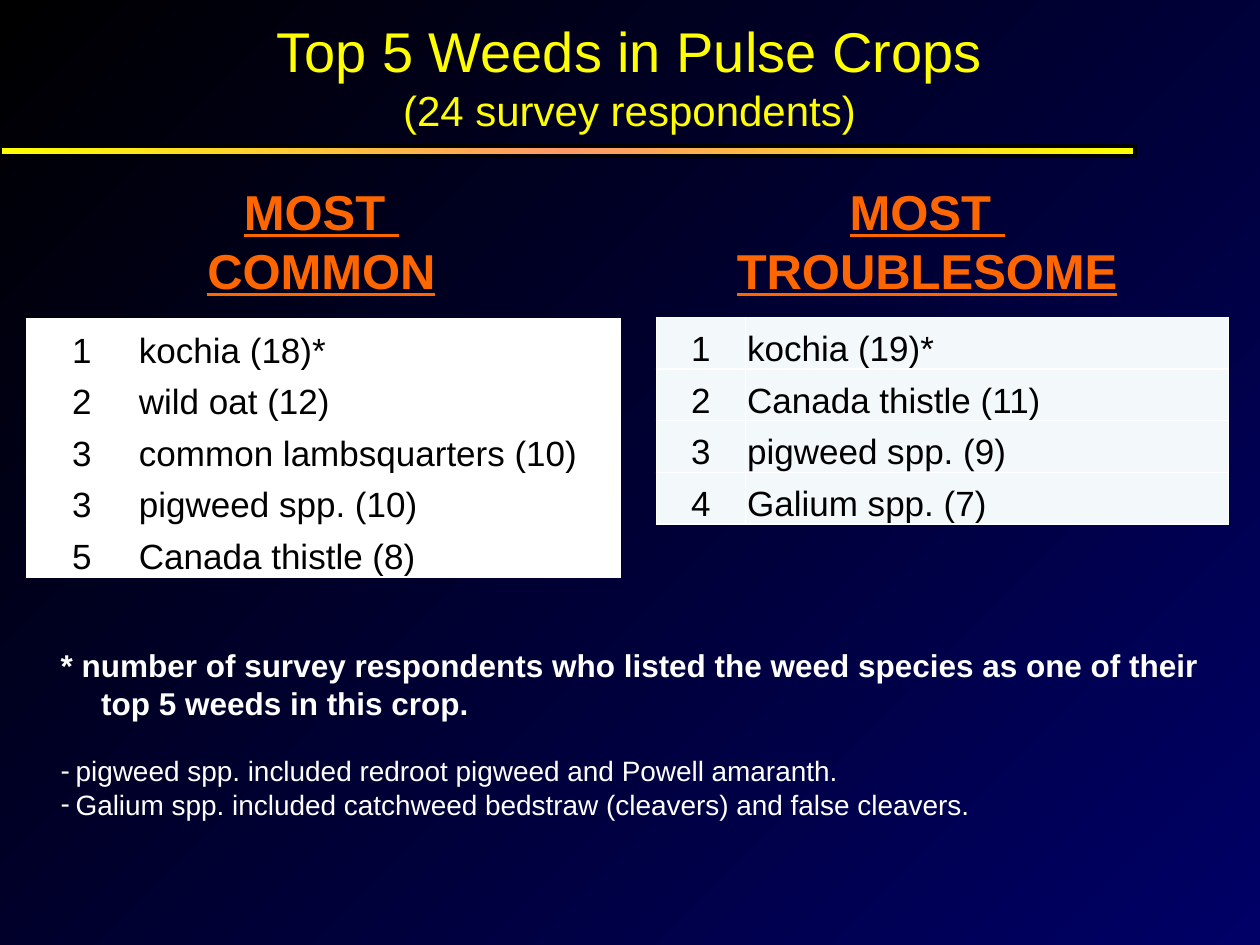
from copy import deepcopy

from lxml import etree
from pptx import Presentation
from pptx.dml.color import RGBColor
from pptx.enum.shapes import MSO_SHAPE
from pptx.enum.text import MSO_ANCHOR, MSO_AUTO_SIZE, PP_ALIGN
from pptx.oxml.ns import qn
from pptx.util import Cm, Pt

RECT = MSO_SHAPE.RECTANGLE
MID, LOW, TOP = MSO_ANCHOR.MIDDLE, MSO_ANCHOR.BOTTOM, MSO_ANCHOR.TOP
FIXED = MSO_AUTO_SIZE.NONE
LEFT, MIDST = PP_ALIGN.LEFT, PP_ALIGN.CENTER


def hue(code):
    return RGBColor.from_string(code)


def put(para, text, size, color, align=LEFT, bold=False, under=False):
    para.alignment = align
    para.space_before = Pt(0)
    run = para.add_run()
    run.text = text
    font = run.font
    font.name, font.size = "Arial", Pt(size)
    font.bold, font.underline = bold, under
    font.color.rgb = hue(color)


deck = Presentation()
deck.slide_width, deck.slide_height = Cm(25.4), Cm(19.05)
slide = deck.slides.add_slide(deck.slide_layouts[1])
title, notes = slide.placeholders

back = slide.background.fill
back.gradient()
back.gradient_angle = 315
for stop, code in zip(back.gradient_stops, ("000000", "000066")):
    stop.color.rgb = hue(code)

title.left, title.top, title.width, title.height = Cm(0.84), Cm(0), Cm(23.7), Cm(3.05)
frame = title.text_frame
frame.auto_size, frame.vertical_anchor = FIXED, MID
put(frame.paragraphs[0], "Top 5 Weeds in Pulse Crops", 32, "FFFF00", MIDST)
put(frame.add_paragraph(), "(24 survey respondents)", 24, "FFFF00", MIDST)

bar = slide.shapes.add_shape(RECT, Cm(0), Cm(2.95), Cm(22.89), Cm(0.2))
bar.shadow.inherit = False
bar.line.color.rgb = hue("000000")
bar.line.width = Pt(2.25)
bar.fill.gradient()
bar.fill.gradient_angle = 0
stops = bar._element.spPr.find(qn("a:gradFill")).find(qn("a:gsLst"))
stops.insert(1, deepcopy(stops[0]))
for stop, code, place in zip(bar.fill.gradient_stops, ("FFFF00", "FF9966", "FFFF00"), (0, 0.5, 1)):
    stop.color.rgb = hue(code)
    stop.position = place

heads = [("COMMON", 3.43, 6.1, True), ("TROUBLESOME", 14.55, 8.28, False)]
for word, left, width, wrap in heads:
    box = slide.shapes.add_textbox(Cm(left), Cm(3.53), Cm(width), Cm(2.64))
    frame = box.text_frame
    frame.word_wrap = wrap
    put(frame.paragraphs[0], "MOST ", 28, "FF6600", MIDST, True, True)
    put(frame.add_paragraph(), word, 28, "FF6600", MIDST, True, True)

common = [("1", "kochia (18)*"), ("2", "wild oat (12)"), ("3", "common lambsquarters (10)"),
          ("3", "pigweed spp. (10)"), ("5", "Canada thistle (8)")]
worst = [("1", "kochia (19)*"), ("2", "Canada thistle (11)"), ("3", "pigweed spp. (9)"),
         ("4", "Galium spp. (7)")]
lists = [(common, 0.53, 6.43, 2.24, "FFFFFF"), (worst, 13.23, 6.4, 1.8, "F3F9FA")]
for weeds, left, top, slim, shade in lists:
    grid = slide.shapes.add_table(len(weeds), 2, Cm(left), Cm(top), Cm(slim + 9.73),
                                  Cm(1.04 * len(weeds))).table
    grid.first_row = grid.horz_banding = False
    grid.columns[0].width, grid.columns[1].width = Cm(slim), Cm(9.73)
    for row, weed in zip(grid.rows, weeds):
        row.height = Cm(1.04)
        for cell, text, align in zip(row.cells, weed, (MIDST, LEFT)):
            cell.margin_left = cell.margin_right = cell.margin_top = Cm(0.03)
            cell.margin_bottom = Cm(0)
            cell.vertical_anchor = LOW
            put(cell.text_frame.paragraphs[0], text, 20, "000000", align)
            props = cell._tc.get_or_add_tcPr()
            for side in ("a:lnL", "a:lnR", "a:lnT", "a:lnB"):
                edge = etree.SubElement(props, qn(side), w="12700")
                paint = etree.SubElement(edge, qn("a:solidFill"))
                etree.SubElement(paint, qn("a:srgbClr"), val="FFFFFF")
            cell.fill.solid()
            cell.fill.fore_color.rgb = hue(shade)

notes.left, notes.top, notes.width, notes.height = Cm(0.97), Cm(12.9), Cm(23.5), Cm(3.84)
frame = notes.text_frame
frame.auto_size, frame.vertical_anchor = FIXED, TOP
lines = [
    ("* number of survey respondents who listed the weed species as one of their  top 5 weeds in this crop.",
     18, True, 0.64, 0),
    ("pigweed spp. included redroot pigweed and Powell amaranth.", 16, False, 0.3, 18.4),
    ("Galium spp. included catchweed bedstraw (cleavers) and false cleavers.", 16, False, 0.3, 0),
]
for spot, (text, size, bold, dent, gap) in enumerate(lines):
    para = frame.add_paragraph() if spot else frame.paragraphs[0]
    put(para, text, size, "FFFFFF", LEFT, bold)
    para.space_before = Pt(gap)
    props = para._p.get_or_add_pPr()
    props.set("marL", str(Cm(dent)))
    props.set("indent", str(-Cm(dent)))
    if bold:
        etree.SubElement(props, qn("a:buNone"))
    else:
        etree.SubElement(props, qn("a:buChar"), char="-")

deck.save("out.pptx")
